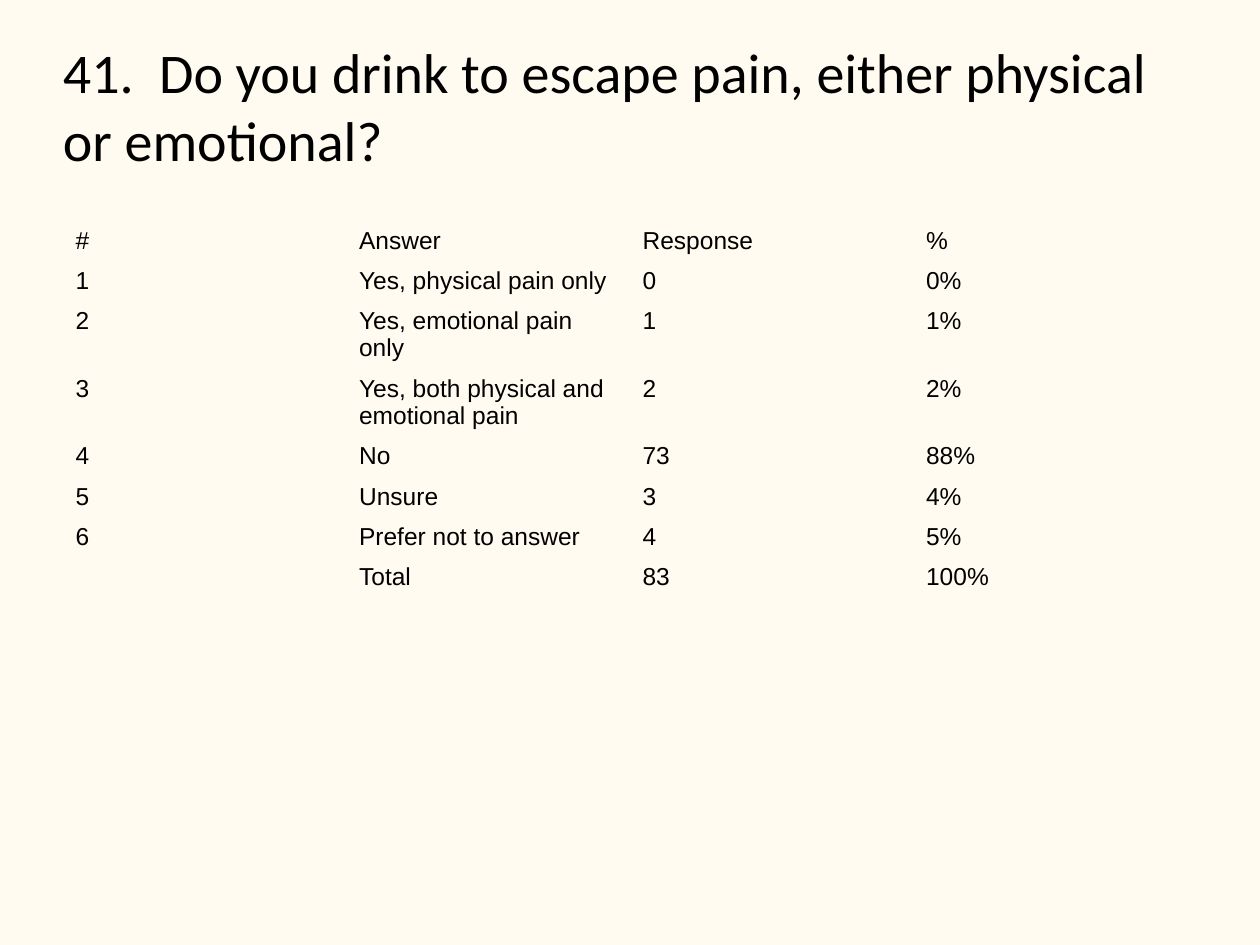
from pptx import Presentation
from pptx.dml.color import RGBColor
from pptx.enum.shapes import MSO_SHAPE
from pptx.enum.text import MSO_ANCHOR, PP_ALIGN
from pptx.oxml.ns import qn
from pptx.util import Inches, Pt

CREAM = RGBColor(0xFF, 0xFB, 0xF0)
BLACK = RGBColor(0x00, 0x00, 0x00)
PLAIN_TABLE_STYLE = "{2D5ABB26-0587-4C30-8999-92F81FD0307C}"

QUESTION = "41.  Do you drink to escape pain, either physical or emotional?"
ANSWERS = [
    ("#", "Answer", "Response", "%"),
    ("1", "Yes, physical pain only", "0", "0%"),
    ("2", "Yes, emotional pain only", "1", "1%"),
    ("3", "Yes, both physical and emotional pain", "2", "2%"),
    ("4", "No", "73", "88%"),
    ("5", "Unsure", "3", "4%"),
    ("6", "Prefer not to answer", "4", "5%"),
    ("", "Total", "83", "100%"),
]


def write(paragraph, text, font_name, size):
    """Fill a paragraph; an empty one still keeps the line height of its size."""
    if text:
        paragraph.text = text
    else:
        paragraph._p.get_or_add_endParaRPr().set("sz", str(size * 100))
    paragraph.alignment = PP_ALIGN.LEFT
    paragraph.font.name = font_name
    paragraph.font.size = Pt(size)
    paragraph.font.color.rgb = BLACK


def add_question(slide):
    panel = slide.shapes.add_shape(
        MSO_SHAPE.ROUNDED_RECTANGLE, Inches(0.5), Inches(0.3), Inches(9), Inches(1.25)
    )
    panel.adjustments[0] = 0
    panel.shadow.inherit = False
    panel.fill.background()
    panel.line.fill.background()
    frame = panel.text_frame
    frame.word_wrap = True
    frame.vertical_anchor = MSO_ANCHOR.TOP
    frame.margin_left = frame.margin_right = 0
    frame.margin_top = frame.margin_bottom = 0
    write(frame.paragraphs[0], QUESTION, "Calibri", 32)


def add_answers(slide):
    """Add the answer table without grid or fill; rows grow to fit their text."""
    row_height = Inches(0.19)
    holder = slide.shapes.add_table(
        len(ANSWERS), len(ANSWERS[0]), Inches(0.5), Inches(1.75),
        Inches(9), row_height * len(ANSWERS),
    )
    table = holder.table
    table.first_row = table.horz_banding = False
    table._tbl.tblPr.find(qn("a:tableStyleId")).text = PLAIN_TABLE_STYLE

    for row, answer in zip(table.rows, ANSWERS):
        row.height = row_height
        for cell, text in zip(row.cells, answer):
            cell.fill.background()
            write(cell.text_frame.paragraphs[0], text, "Arial", 14)
    holder.width = holder.height = Inches(3.28)


def main():
    presentation = Presentation()
    presentation.slide_width = Inches(10)
    presentation.slide_height = Inches(7.5)
    slide = presentation.slides.add_slide(presentation.slide_layouts[6])
    slide.background.fill.solid()
    slide.background.fill.fore_color.rgb = CREAM
    add_question(slide)
    add_answers(slide)
    presentation.save("out.pptx")


if __name__ == "__main__":
    main()
